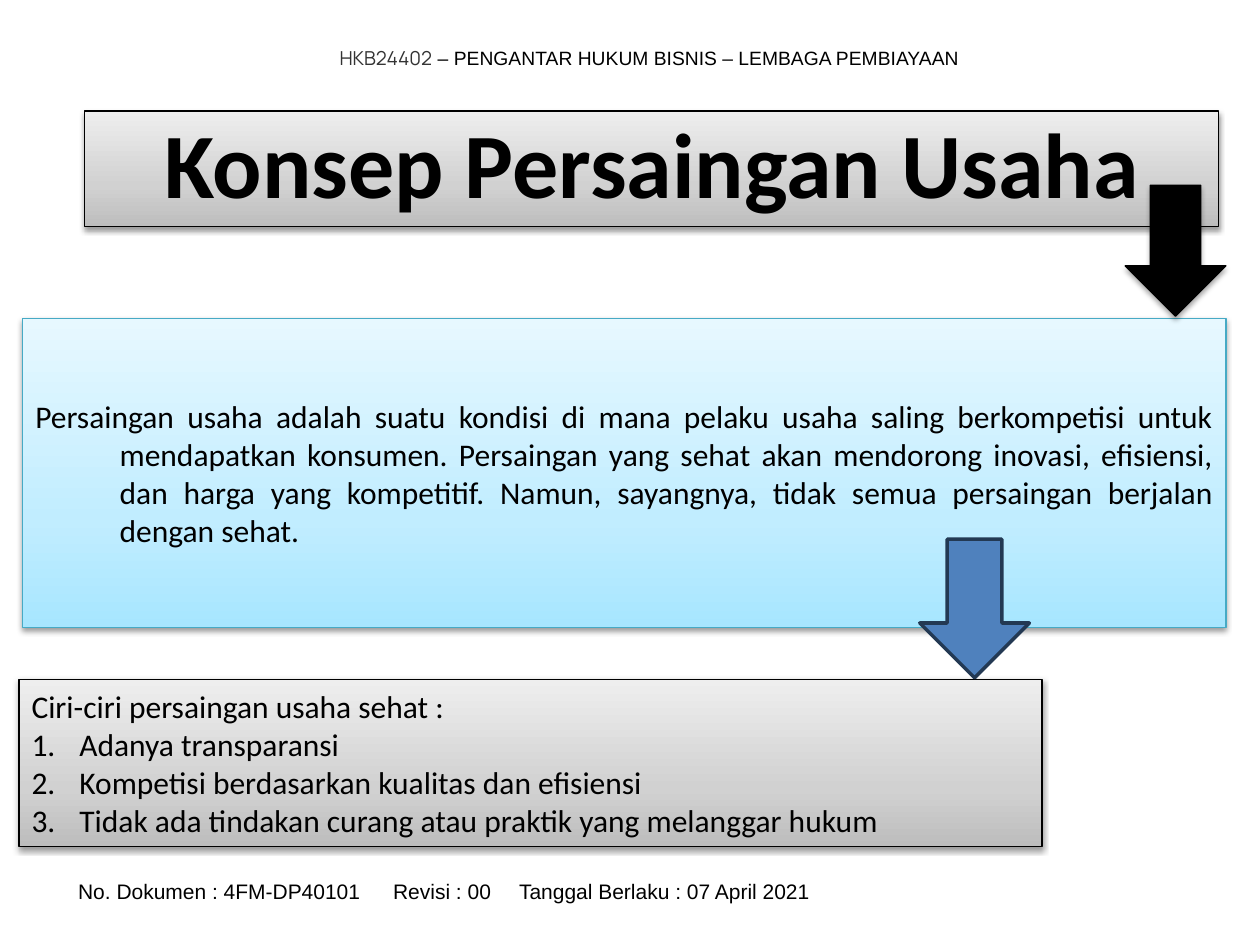
from copy import deepcopy

from lxml import etree
from pptx import Presentation
from pptx import util as u
from pptx.dml.color import RGBColor
from pptx.enum import shapes, text
from pptx.oxml.ns import qn

BLACK = RGBColor(0x00, 0x00, 0x00)
CHARCOAL = RGBColor(0x33, 0x33, 0x33)
BLUE = RGBColor(0x4F, 0x81, 0xBD)
NAVY = RGBColor(0x23, 0x39, 0x53)
TEAL = RGBColor(0x46, 0xAA, 0xC5)
GRAYS = [RGBColor(0xBD, 0xBD, 0xBD), RGBColor(0xD1, 0xD1, 0xD1), RGBColor(0xEE, 0xEE, 0xEE)]
SKIES = [RGBColor(0xA7, 0xE6, 0xFF), RGBColor(0xC1, 0xED, 0xFF), RGBColor(0xE7, 0xF8, 0xFF)]
STOPS = [0, 0.35, 1]

ALIGN = text.PP_ALIGN
DEFINITION = (
    "Persaingan usaha adalah suatu kondisi di mana pelaku usaha saling berkompetisi untuk "
    "mendapatkan konsumen. Persaingan yang sehat akan mendorong inovasi, efisiensi, dan harga "
    "yang kompetitif. Namun, sayangnya, tidak semua persaingan berjalan dengan sehat."
)
TRAITS = [
    "Adanya transparansi",
    "Kompetisi berdasarkan kualitas dan efisiensi",
    "Tidak ada tindakan curang atau praktik yang melanggar hukum",
]


def place(shape, box):
    shape.left, shape.top, shape.width, shape.height = (u.Inches(side) for side in box)


def write(para, words, size=18, font="Calibri", color=BLACK, bold=False,
          align=ALIGN.JUSTIFY, spacing=1.0, hanging=0, numbered=False):
    """Add a span to a paragraph and set the paragraph's layout."""
    para.alignment, para.line_spacing, para.space_before = align, spacing, u.Pt(0)
    props = para._p.get_or_add_pPr()
    props.set("marL", str(u.Inches(hanging)))
    props.set("indent", str(-u.Inches(hanging)))
    for bullet in props.findall(qn("a:buNone")):
        props.remove(bullet)
    if numbered:
        etree.SubElement(props, qn("a:buAutoNum"), type="arabicPeriod")
    else:
        etree.SubElement(props, qn("a:buNone"))
    span = para.add_run()
    span.text = words
    span.font.size, span.font.name, span.font.bold = u.Pt(size), font, bold
    span.font.color.rgb = color


def prepare_frame(shape):
    frame = shape.text_frame
    frame.word_wrap = True
    frame.auto_size = text.MSO_AUTO_SIZE.NONE
    frame.vertical_anchor = text.MSO_ANCHOR.MIDDLE
    return frame


def outline(shape, color, width):
    shape.line.color.rgb = color
    shape.line.width = u.Pt(width)


def cast_shadow(shape, opacity, distance):
    effects = shape._element.spPr.find(qn("a:effectLst"))
    shadow = etree.SubElement(
        effects, qn("a:outerShdw"), blurRad=str(u.Pt(3.1)), dist=str(u.Pt(distance)),
        dir="5400000", rotWithShape="0")
    color = etree.SubElement(shadow, qn("a:srgbClr"), val=str(BLACK))
    etree.SubElement(color, qn("a:alpha"), val=str(opacity * 1000))


def style_panel(panel, box, colors, edge):
    """Give a placeholder its gradient, edge and shadow; return its text frame."""
    place(panel, box)
    panel.fill.gradient()
    panel.fill.gradient_angle = 90
    stops = panel._element.spPr.find(".//" + qn("a:gsLst"))
    stops.append(deepcopy(stops[0]))
    for stop, color, position in zip(panel.fill.gradient_stops, colors, STOPS):
        stop.color.rgb, stop.position = color, position
    outline(panel, edge, 0.75)
    panel.shadow.inherit = False
    cast_shadow(panel, 38, 1.6)
    return prepare_frame(panel)


def add_header(page, box):
    frame = prepare_frame(page.shapes.add_textbox(*map(u.Inches, box)))
    para = frame.paragraphs[0]
    write(para, "HKB24402", size=11, font="Manrope", color=CHARCOAL, align=ALIGN.CENTER)
    write(para, " – PENGANTAR HUKUM BISNIS – LEMBAGA PEMBIAYAAN", size=11, font="Arial",
          align=ALIGN.CENTER)


def add_footer(page, box):
    frame = prepare_frame(page.shapes.add_textbox(*map(u.Inches, box)))
    frame.margin_left = u.Inches(0.42)
    para = frame.paragraphs[0]
    entries = ["No. Dokumen : 4FM-DP40101", "Revisi : 00", "Tanggal Berlaku : 07 April 2021"]
    write(para, "\t".join(entries), size=12, font="Arial", align=ALIGN.LEFT)
    tabs = etree.SubElement(para._p.pPr, qn("a:tabLst"))
    for stop in (3.63, 6.12):
        etree.SubElement(tabs, qn("a:tab"), pos=str(u.Inches(stop)), algn="l")


def fill_title(panel, box):
    frame = style_panel(panel, box, GRAYS, BLACK)
    write(frame.paragraphs[0], "Konsep Persaingan Usaha", size=52.6, bold=True,
          align=ALIGN.CENTER, spacing=0.9)


def fill_definition(panel, box):
    frame = style_panel(panel, box, SKIES, TEAL)
    write(frame.paragraphs[0], DEFINITION, hanging=0.67)


def fill_traits(panel, box):
    frame = style_panel(panel, box, GRAYS, BLACK)
    write(frame.paragraphs[0], "Ciri-ciri persaingan usaha sehat :")
    for trait in TRAITS:
        write(frame.add_paragraph(), trait, hanging=0.38, numbered=True)


def add_down_arrow(page, box, color, edge, width):
    arrow = page.shapes.add_shape(shapes.MSO_SHAPE.DOWN_ARROW, *map(u.Inches, box))
    arrow.shadow.inherit = False
    arrow.fill.solid()
    arrow.fill.fore_color.rgb = color
    outline(arrow, edge, width)
    return arrow


def main():
    deck = Presentation()
    deck.slide_width, deck.slide_height = u.Inches(10), u.Inches(7.5)
    page = deck.slides.add_slide(deck.slide_layouts.get_by_name("Two Content"))
    title, definition, traits = page.placeholders

    add_header(page, (0.98, 0.31, 8.35, 0.29))
    add_footer(page, (0.2, 6.92, 9.45, 0.3))
    fill_title(title, (0.67, 0.88, 9, 0.92))
    fill_definition(definition, (0.18, 2.53, 9.55, 2.45))
    fill_traits(traits, (0.15, 5.39, 8.12, 1.33))
    to_definition = add_down_arrow(page, (8.93, 1.47, 0.8, 1.04), BLACK, BLACK, 0.75)
    cast_shadow(to_definition, 35, 1.8)
    add_down_arrow(page, (7.3, 4.28, 0.87, 1.1), BLUE, NAVY, 2)
    deck.save("out.pptx")


if __name__ == "__main__":
    main()
